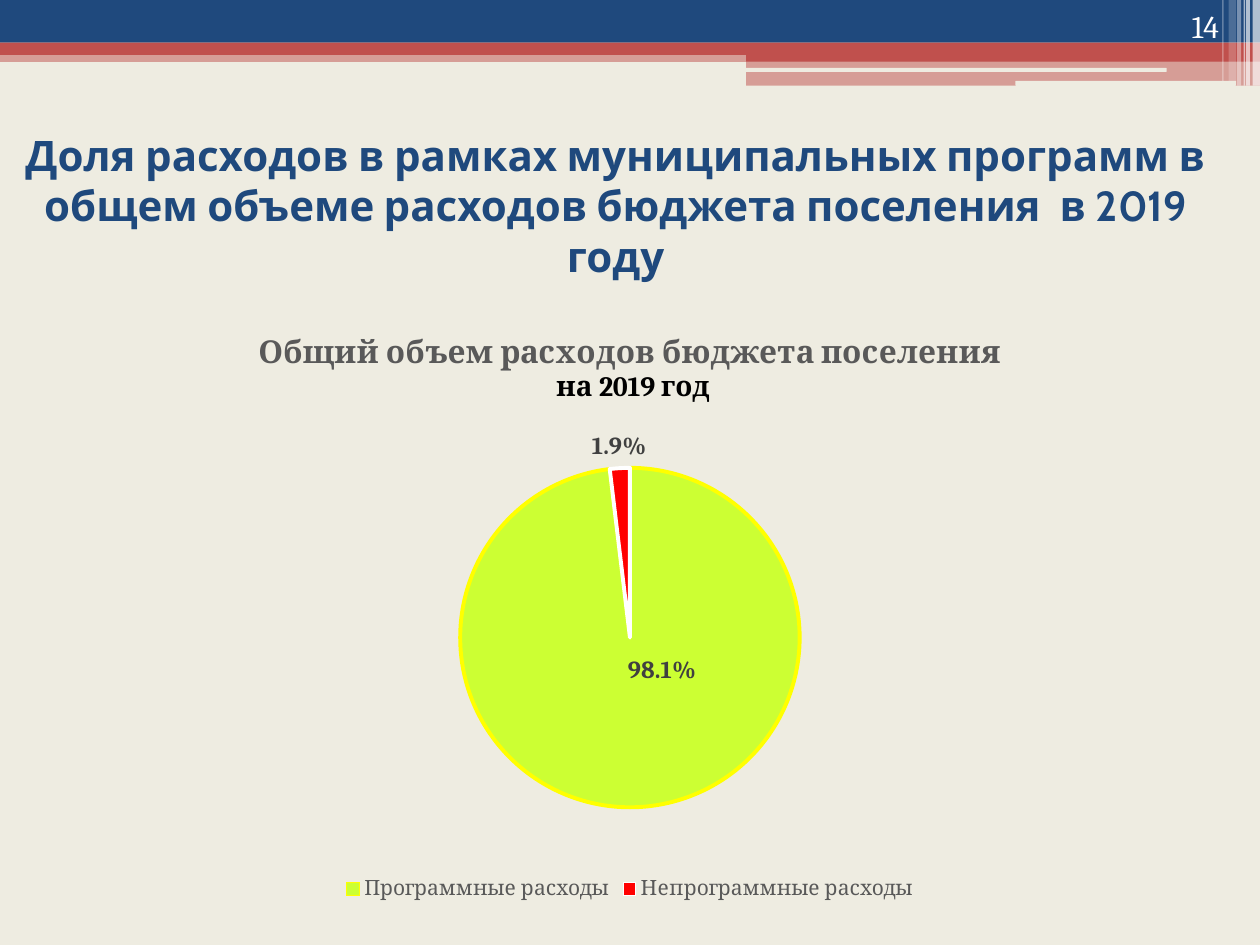
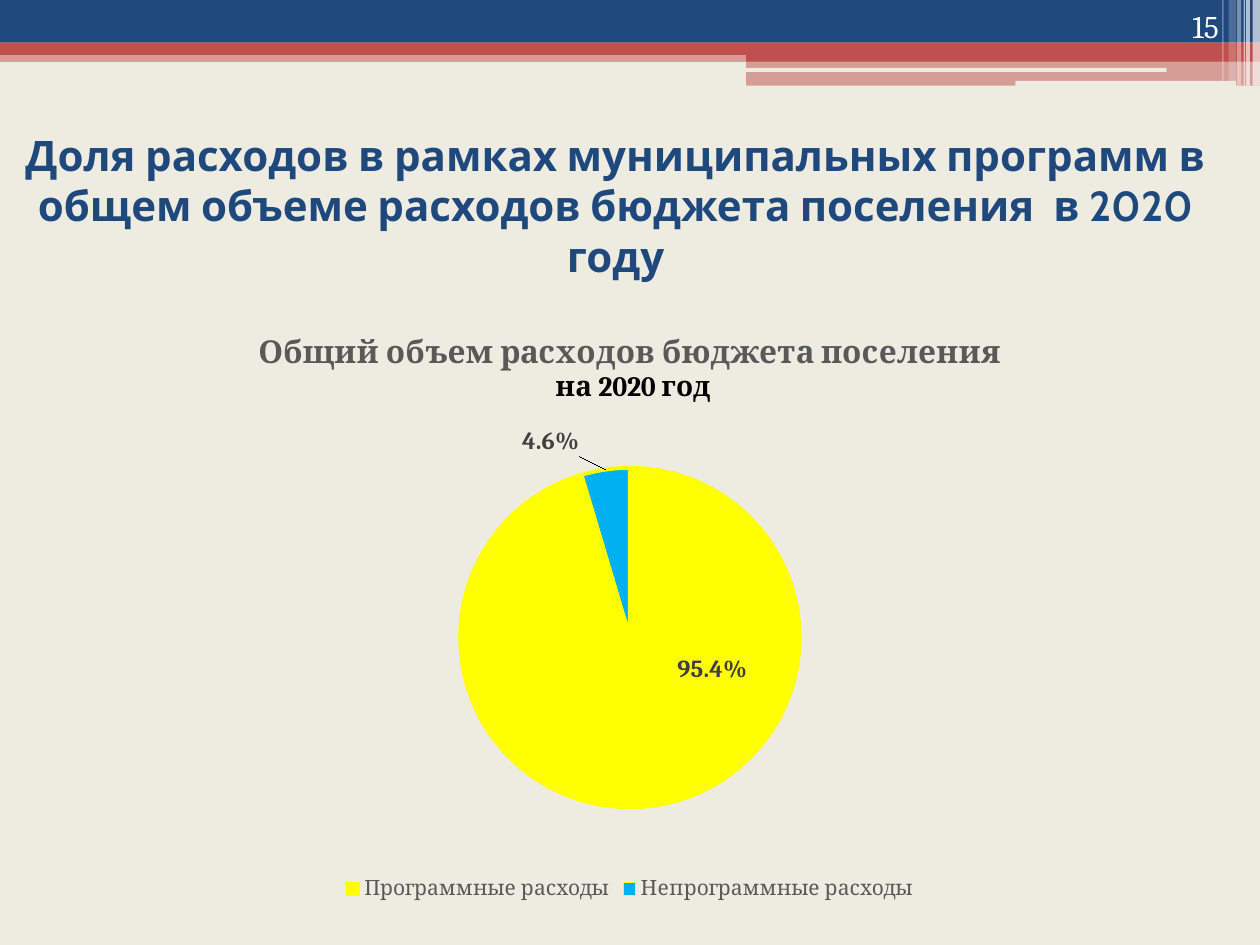
from lxml import etree
from pptx import Presentation
from pptx.chart.data import CategoryChartData
from pptx.dml.color import RGBColor
from pptx.enum.chart import XL_CHART_TYPE as ChartType
from pptx.enum.chart import XL_LABEL_POSITION as LabelPosition
from pptx.enum.chart import XL_LEGEND_POSITION as LegendPosition
from pptx.enum.shapes import MSO_SHAPE as Shape
from pptx.enum.text import MSO_ANCHOR as Anchor
from pptx.enum.text import PP_ALIGN as Align
from pptx.oxml import parse_xml
from pptx.oxml.ns import nsdecls, qn
from pptx.util import Cm, Pt

COLORS = {
    "cream": "EEECE1", "navy": "1F497D", "brick": "C0504D", "white": "FFFFFF",
    "black": "000000", "grey": "595959", "dark": "404040", "lime": "CCFF33",
    "red": "FF0000", "yellow": "FFFF00", "sky": "00B0F0",
}

# Header bands and stripes: left, top, width, height (cm), colour, opacity %
BANDS = [
    (0, 1.02, 25.4, 0.23, "brick", 50),
    (0, 0, 25.4, 0.86, "navy", 100),
    (0, 0.86, 25.4, 0.25, "brick", 100),
    (15.04, 0.99, 10.36, 0.25, "brick", 100),
    (15.04, 1.22, 10.36, 0.51, "brick", 50),
    (15.01, 1.37, 8.51, 0.08, "cream", 100),
    (20.47, 1.63, 4.45, 0.1, "cream", 100),
    (25.25, 0, 0.15, 1.73, "white", 65),
    (25.12, 0, 0.08, 1.73, "white", 65),
    (25.07, 0, 0.03, 1.73, "white", 60),
    (24.94, 0, 0.08, 1.73, "white", 40),
    (24.77, 0, 0.15, 1.63, "white", 20),
    (24.64, 0, 0.03, 1.63, "white", 30),
]

# Label shifts are fractions of the chart's width and height
PAGES = [
    {"number": "14", "year": "2019", "shares": (0.981, 0.019),
     "fills": ("lime", "red"), "lines": ("yellow", "white"),
     "shifts": ((0.024, -0.087), (0, 0))},
    {"number": "15", "year": "2020", "shares": (0.954, 0.046),
     "fills": ("yellow", "sky"), "lines": ("yellow", "yellow"),
     "shifts": ((0.062, -0.087), (-0.022, -0.01))},
]
TITLE_FONT = {"name": "Cabin", "size": Pt(24), "bold": True}
NUMBER_FONT = {"name": "Cambria", "size": Pt(18)}
CHART_FONT = {"name": "Cambria", "size": Pt(10)}
LEGEND_FONT = {"name": "Cambria", "size": Pt(12)}
LABEL_FONT = {"name": "Cambria", "size": Pt(14), "bold": True}


def style_font(font, values, color):
    for name, value in values.items():
        setattr(font, name, value)
    font.color.rgb = RGBColor.from_string(COLORS[color])


def manual_layout(**settings):
    layout = parse_xml(f'<c:layout {nsdecls("c")}><c:manualLayout/></c:layout>')
    for name, value in settings.items():
        etree.SubElement(layout[0], qn(f"c:{name}")).set("val", str(value))
    return layout


deck = Presentation()
deck.slide_width, deck.slide_height = Cm(25.4), Cm(19.05)

for facts in PAGES:
    page = deck.slides.add_slide(deck.slide_layouts[6])
    page.background.fill.solid()
    page.background.fill.fore_color.rgb = RGBColor.from_string(COLORS["cream"])

    # Header
    for left, top, width, height, color, opacity in BANDS:
        kind = Shape.ROUNDED_RECTANGLE if color == "cream" else Shape.RECTANGLE
        band = page.shapes.add_shape(kind, Cm(left), Cm(top), Cm(width), Cm(height))
        band.shadow.inherit = False
        band.line.fill.background()
        band.fill.solid()
        band.fill.fore_color.rgb = RGBColor.from_string(COLORS[color])
        if opacity < 100:
            tone = band.fill._xPr.find(f".//{qn('a:srgbClr')}")
            etree.SubElement(tone, qn("a:alpha")).set("val", str(opacity * 1000))

    # Title and page number
    title = ("Доля расходов в рамках муниципальных программ в общем объеме "
             f"расходов бюджета поселения  в {facts['year']} году")
    for text, place, anchor, align, font, color in [
        (title, (0, 2.13, 24.82, 4.01), Anchor.MIDDLE, Align.CENTER, TITLE_FONT, "navy"),
        (facts["number"], (22.71, 0, 2.11, 1.02), Anchor.BOTTOM, Align.RIGHT,
         NUMBER_FONT, "white"),
    ]:
        box = page.shapes.add_textbox(*map(Cm, place))
        box.text_frame.word_wrap = True
        box.text_frame.vertical_anchor = anchor
        para = box.text_frame.paragraphs[0]
        para.alignment = align
        span = para.add_run()
        span.text = text
        style_font(span.font, font, color)

    # Pie chart
    data = CategoryChartData(number_format="0.0%")
    data.categories = ["Программные расходы", "Непрограммные расходы"]
    data.add_series("Series 1", facts["shares"])
    chart = page.shapes.add_chart(
        ChartType.PIE, Cm(1.27), Cm(6.25), Cm(22.86), Cm(12.01), data).chart
    style_font(chart.font, CHART_FONT, "black")
    plot_area = chart._chartSpace.chart.plotArea
    for old in plot_area.findall(qn("c:layout")):
        plot_area.remove(old)
    plot_area.insert(0, manual_layout(layoutTarget="inner", xMode="edge", yMode="edge",
                                      x=0.35, y=0.265, w=0.3, h=0.57))

    # Chart title
    chart.has_title = True
    heading = chart.chart_title.text_frame
    for index, (text, size, color) in enumerate([
        ("Общий объем расходов бюджета поселения", 18, "grey"),
        (f" на {facts['year']} год", 16, "black"),
    ]):
        para = heading.add_paragraph() if index else heading.paragraphs[0]
        span = para.add_run()
        span.text = text
        style_font(span.font, {"name": "Cambria", "size": Pt(size), "bold": True}, color)

    # Legend
    chart.has_legend = True
    chart.legend.position = LegendPosition.BOTTOM
    chart.legend.include_in_layout = False
    style_font(chart.legend.font, LEGEND_FONT, "grey")

    # Slices and their labels
    plot = chart.plots[0]
    plot.vary_by_categories = True
    series = plot.series[0]
    labels = series.data_labels
    labels.show_value = True
    labels.number_format, labels.number_format_is_linked = "0.0%", False
    style_font(labels.font, LABEL_FONT, "dark")
    positions = (LabelPosition.CENTER, LabelPosition.OUTSIDE_END)
    for index, position in enumerate(positions):
        point = series.points[index]
        point.format.fill.solid()
        point.format.fill.fore_color.rgb = RGBColor.from_string(
            COLORS[facts["fills"][index]])
        point.format.line.color.rgb = RGBColor.from_string(COLORS[facts["lines"][index]])
        point.format.line.width = Pt(2.25)
        style_font(point.data_label.font, LABEL_FONT, "dark")
        point.data_label.position = position
    for label, (x, y) in zip(series._element.iter(qn("c:dLbl")), facts["shifts"]):
        label.insert(1, manual_layout(x=x, y=y))
        label.insert(2, parse_xml(
            f'<c:numFmt {nsdecls("c")} formatCode="0.0%" sourceLinked="0"/>'))

deck.save("out.pptx")
